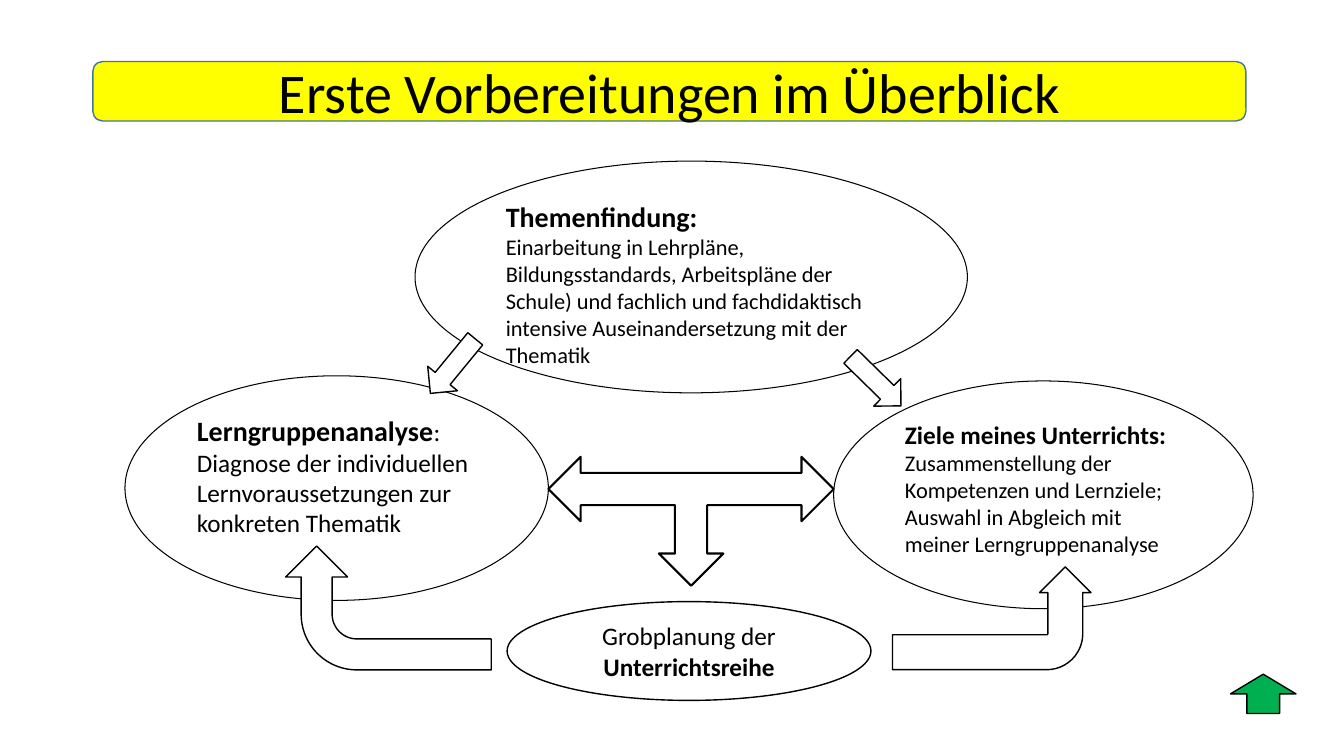
from dataclasses import dataclass

from pptx import Presentation
from pptx.dml.color import RGBColor as Rgb
from pptx.enum.shapes import MSO_SHAPE as Kind
from pptx.enum.text import MSO_ANCHOR as Anchor, PP_ALIGN as Align
from pptx.util import Cm, Pt


@dataclass(frozen=True)
class Theme:
    """Hold the colours, font and type sizes."""
    font: str = "Calibri"
    black: str = "000000"
    white: str = "FFFFFF"
    yellow: str = "FFFF00"
    green: str = "00B050"
    blue: str = "43739E"
    title: int = 40
    head: int = 20
    body: int = 18
    small: int = 16


THEME = Theme()
MID = {"anchor": Anchor.MIDDLE, "align": Align.CENTER}
TOP = {"anchor": Anchor.TOP, "align": Align.LEFT}


def apply(item, values):
    """Set each named value on the item."""
    for name, value in values.items():
        setattr(item, name, value)


def draw(slide, kind, box, fill=THEME.white, line=THEME.black, width=1.0,
         turn=0, flip=False, bends=()):
    """Add a plain shape in a box given in centimetres."""
    shape = slide.shapes.add_shape(kind, *map(Cm, box))
    shape.shadow.inherit = False
    shape.rotation = turn
    shape.fill.solid()
    shape.fill.fore_color.rgb = Rgb.from_string(fill)
    shape.line.color.rgb = Rgb.from_string(line)
    shape.line.width = Pt(width)
    for i, bend in enumerate(bends):
        shape.adjustments[i] = bend
    if flip:
        shape.element.spPr.xfrm.set("flipH", "1")
    return shape


def write(shape, paras, anchor, align):
    """Fill a shape with paragraphs of (text, size, bold) runs."""
    frame = shape.text_frame
    apply(frame, {"word_wrap": True, "vertical_anchor": anchor})
    for i, runs in enumerate(paras):
        para = frame.add_paragraph() if i else frame.paragraphs[0]
        para.alignment = align
        for text, size, bold in runs:
            run = para.add_run()
            run.text = text
            apply(run.font, {"name": THEME.font, "size": Pt(size), "bold": bold})
            run.font.color.rgb = Rgb.from_string(THEME.black)


def banner(slide, box):
    """Draw the title bar."""
    bar = draw(slide, Kind.ROUNDED_RECTANGLE, box, THEME.yellow, THEME.blue)
    write(bar, [[("Erste Vorbereitungen im Überblick", THEME.title, False)]], **MID)


def topics(slide, box):
    """Draw the four ovals of the planning cycle."""
    left, top = box
    head, body, small = THEME.head, THEME.body, THEME.small
    ovals = [
        ((0, 5.41, 10.67, 5.66), 0.75, TOP, [
            [("Lerngruppenanalyse", head, True), (":", body, False)],
            [("Diagnose der individuellen Lernvoraussetzungen zur "
              "konkreten Thematik", body, False)]]),
        ((17.86, 5.54, 10.57, 5.74), 0.75, TOP, [
            [("Ziele meines Unterrichts: ", body, True),
             ("Zusammenstellung der Kompetenzen und Lernziele; Auswahl in "
              "Abgleich mit meiner Lerngruppenanalyse", small, False)]]),
        ((7.31, 0, 13.92, 5.84), 0.75, TOP, [
            [("Themenfindung:", head, True)],
            [("Einarbeitung in Lehrpläne, Bildungsstandards, Arbeitspläne der "
              "Schule) und fachlich und fachdidaktisch intensive "
              "Auseinandersetzung mit der Thematik", small, False)]]),
        ((9.63, 11.1, 9.17, 2.49), 1, MID, [
            [("Grobplanung der ", body, False),
             ("Unterrichtsreihe", body, True)]]),
    ]
    for (x, y, w, h), width, style, paras in ovals:
        oval = draw(slide, Kind.OVAL, (left + x, top + y, w, h), width=width)
        write(oval, paras, **style)


def arrows(slide, box):
    """Draw the arrows that link the ovals."""
    left, top = box
    links = [
        (Kind.LEFT_RIGHT_UP_ARROW, (10.67, 7.45, 7.19, 3.25),
         {"turn": 180, "width": 1.5}),
        (Kind.BENT_ARROW, (5.08, 8.67, 3.12, 5.18),
         {"turn": 270, "bends": (0.25, 0.25, 0.25, 0.45)}),
        (Kind.BENT_ARROW, (20.55, 9.02, 2.59, 5),
         {"turn": 90, "flip": True, "bends": (0.34, 0.25, 0.25, 0.35)}),
        (Kind.RIGHT_ARROW, (18.03, 5.06, 1.78, 0.97), {"turn": 44.4}),
        (Kind.RIGHT_ARROW, (7.37, 4.68, 1.78, 0.97), {"turn": 129.4}),
    ]
    for kind, (x, y, w, h), style in links:
        draw(slide, kind, (left + x, top + y, w, h), **style)


def main():
    """Build the slide and save it."""
    deck = Presentation()
    apply(deck, {"slide_width": Cm(33.87), "slide_height": Cm(19.05)})
    slide = deck.slides.add_slide(deck.slide_layouts[6])
    banner(slide, (2.34, 1.55, 29.06, 1.5))
    cycle = (3.15, 4.06)
    topics(slide, cycle)
    arrows(slide, cycle)
    draw(slide, Kind.UP_ARROW, (31.01, 16.99, 1.65, 0.99), THEME.green)
    deck.save("out.pptx")


if __name__ == "__main__":
    main()
